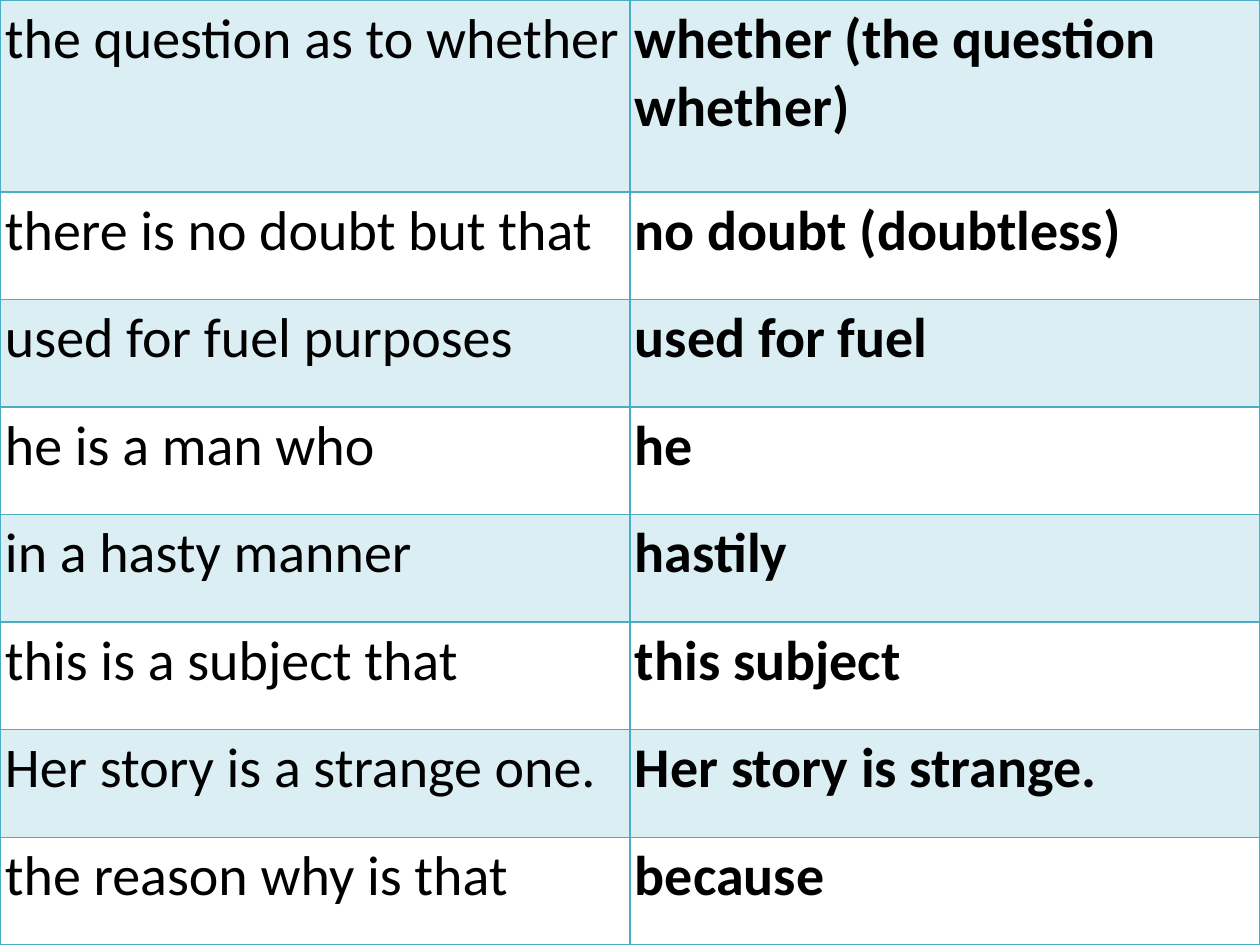
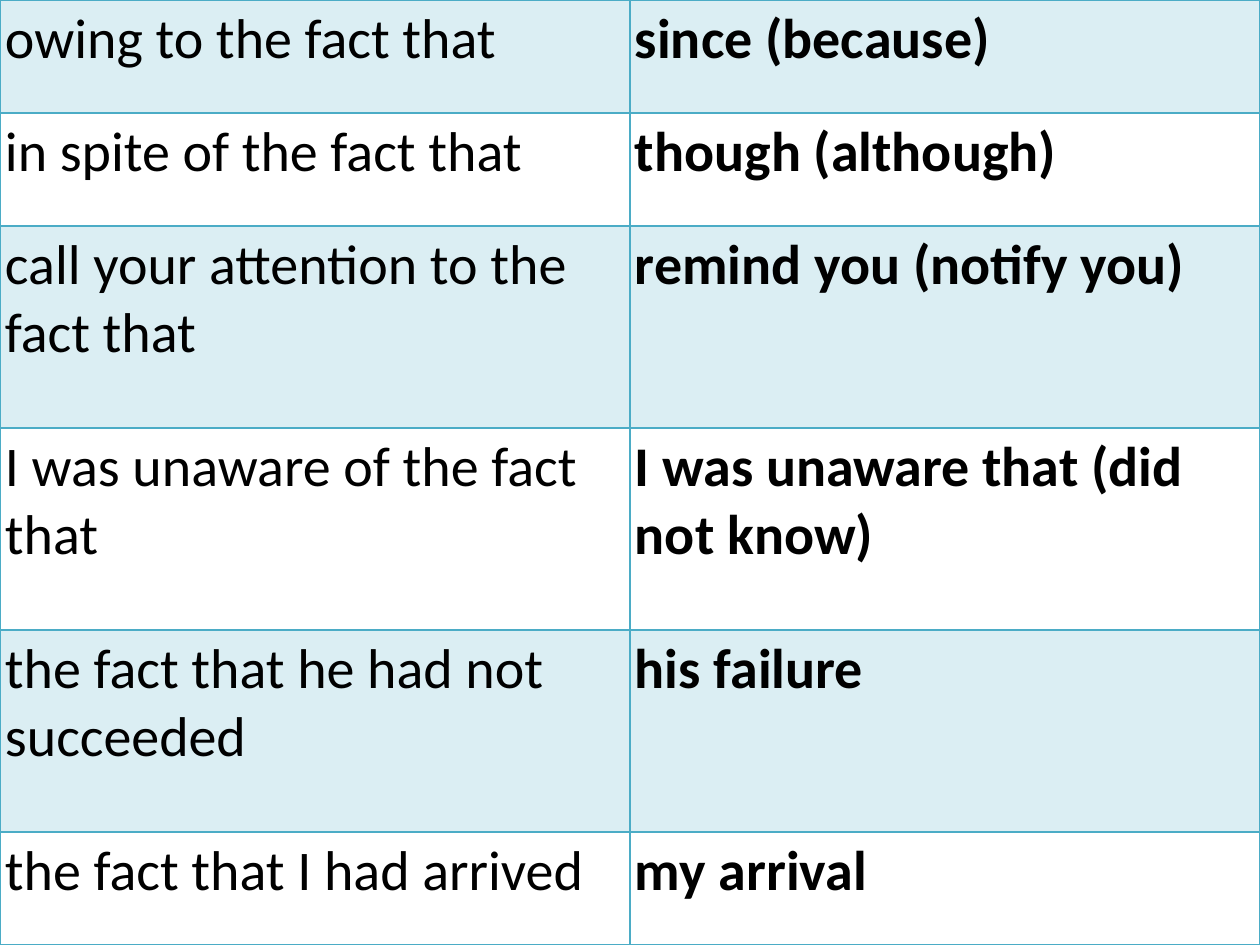
"""Build two slides of wordy phrases beside their concise replacements."""
from dataclasses import dataclass

from lxml.etree import Element, SubElement
from pptx import Presentation
from pptx.dml.color import RGBColor
from pptx.oxml.ns import qn
from pptx.presentation import Presentation as Deck
from pptx.table import _Cell as Cell
from pptx.util import Emu, Pt

PX_PER_INCH = 126
EMU_PER_PX = 914400 / PX_PER_INCH
PAGE_WIDTH, PAGE_HEIGHT = 1260, 945
CELL_INSET = 5
BLANK_LAYOUT = 6

AQUA = RGBColor(0x4B, 0xAC, 0xC6)
BLACK = RGBColor(0x00, 0x00, 0x00)
BAND_ALPHA = 20000
BORDER_WIDTH = Pt(1)
BORDER_SIDES = ("a:lnL", "a:lnR", "a:lnT", "a:lnB")

TABLE_FORMAT = {"first_row": False, "horz_banding": False}
CELL_FORMAT = {
    f"margin_{side}": Emu(round(CELL_INSET * EMU_PER_PX))
    for side in ("left", "right", "top", "bottom")
}
FONT_FORMAT = {"name": "Calibri", "size": Pt(32)}


@dataclass(frozen=True)
class Phrase:
    wordy: str
    concise: str
    tall: bool = False


@dataclass(frozen=True)
class PhrasePage:
    tall_height: int
    phrases: tuple[Phrase, ...]

    def row_heights(self) -> list[float]:
        """Give tall rows their height and share the rest of the page equally."""
        tall_count = sum(phrase.tall for phrase in self.phrases)
        rest = PAGE_HEIGHT - tall_count * self.tall_height
        short_height = rest / (len(self.phrases) - tall_count)
        return [self.tall_height if phrase.tall else short_height for phrase in self.phrases]


PAGES = (
    PhrasePage(192, (
        Phrase("the question as to whether", "whether (the question whether)", tall=True),
        Phrase("there is no doubt but that", "no doubt (doubtless)"),
        Phrase("used for fuel purposes", "used for fuel"),
        Phrase("he is a man who", "he"),
        Phrase("in a hasty manner", "hastily"),
        Phrase("this is a subject that", "this subject"),
        Phrase("Her story is a strange one.", "Her story is strange."),
        Phrase("the reason why is that", "because"),
    )),
    PhrasePage(202, (
        Phrase("owing to the fact that", "since (because)"),
        Phrase("in spite of the fact that", "though (although)"),
        Phrase("call your attention to the fact that", "remind you (notify you)", tall=True),
        Phrase("I was unaware of the fact that", "I was unaware that (did not know)", tall=True),
        Phrase("the fact that he had not succeeded", "his failure", tall=True),
        Phrase("the fact that I had arrived", "my arrival"),
    )),
)


def px(length: float) -> Emu:
    """Turn pixels into EMU."""
    return Emu(round(length * EMU_PER_PX))


def apply_format(target: object, values: dict) -> None:
    """Set each named attribute on the target."""
    for name, value in values.items():
        setattr(target, name, value)


def fill_cell(cell: Cell, banded: bool) -> None:
    """Tint a banded cell and leave any other cell clear."""
    if not banded:
        cell.fill.background()
        return
    cell.fill.solid()
    cell.fill.fore_color.rgb = AQUA
    color = cell._tc.tcPr.find(f".//{qn('a:srgbClr')}")
    SubElement(color, qn("a:alpha"), val=str(BAND_ALPHA))


def draw_borders(cell: Cell) -> None:
    """Outline all four sides, ahead of the fill as the schema requires."""
    properties = cell._tc.get_or_add_tcPr()
    for position, side in enumerate(BORDER_SIDES):
        line = Element(qn(side), w=str(BORDER_WIDTH))
        fill = SubElement(line, qn("a:solidFill"))
        SubElement(fill, qn("a:srgbClr"), val=str(AQUA))
        properties.insert(position, line)


def write_cell(cell: Cell, text: str, bold: bool, banded: bool) -> None:
    """Write and style one phrase."""
    apply_format(cell, CELL_FORMAT)
    span = cell.text_frame.paragraphs[0].add_run()
    span.text = text
    apply_format(span.font, FONT_FORMAT | {"bold": bold})
    span.font.color.rgb = BLACK
    fill_cell(cell, banded)
    draw_borders(cell)


def add_phrase_page(deck: Deck, content: PhrasePage) -> None:
    """Add a slide filled by its two-column phrase table."""
    page = deck.slides.add_slide(deck.slide_layouts[BLANK_LAYOUT])
    table = page.shapes.add_table(
        len(content.phrases), 2, 0, 0, px(PAGE_WIDTH), px(PAGE_HEIGHT)
    ).table
    apply_format(table, TABLE_FORMAT)
    for row, height in zip(table.rows, content.row_heights()):
        row.height = px(height)
    for index, phrase in enumerate(content.phrases):
        banded = index % 2 == 0
        write_cell(table.cell(index, 0), phrase.wordy, False, banded)
        write_cell(table.cell(index, 1), phrase.concise, True, banded)


def main() -> None:
    """Build and save the deck."""
    deck = Presentation()
    apply_format(deck, {"slide_width": px(PAGE_WIDTH), "slide_height": px(PAGE_HEIGHT)})
    for content in PAGES:
        add_phrase_page(deck, content)
    deck.save("out.pptx")


if __name__ == "__main__":
    main()
